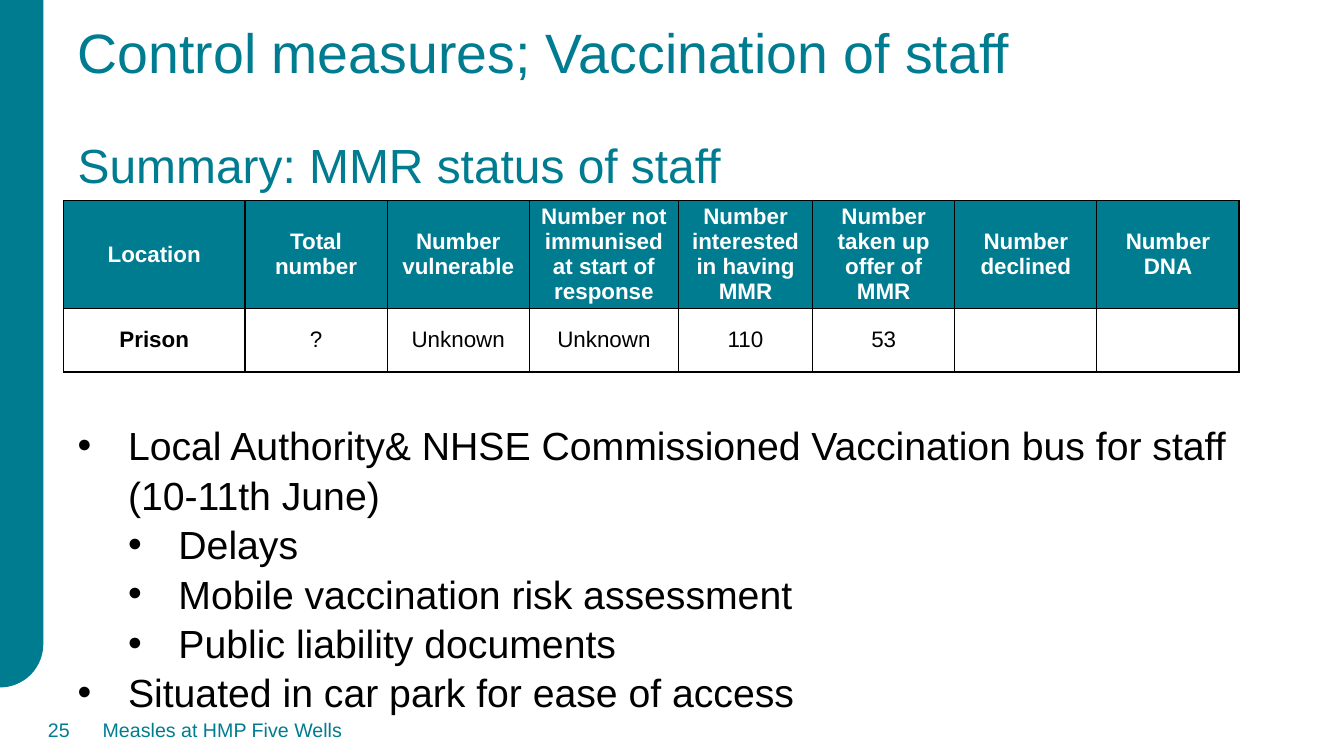
"""Build the slide on MMR vaccination of prison staff."""
from dataclasses import dataclass
from math import cos, pi, sin

from lxml import etree
from pptx import Presentation
from pptx.dml.color import RGBColor
from pptx.enum.text import MSO_ANCHOR, MSO_AUTO_SIZE, PP_ALIGN
from pptx.oxml.ns import qn
from pptx.util import Inches, Pt

TOP, MIDDLE = MSO_ANCHOR.TOP, MSO_ANCHOR.MIDDLE
LEFT, CENTER, RIGHT = PP_ALIGN.LEFT, PP_ALIGN.CENTER, PP_ALIGN.RIGHT
NO_AUTOFIT = MSO_AUTO_SIZE.NONE


@dataclass(frozen=True)
class Theme:
    font: str = "Arial"
    teal: str = "007C91"
    black: str = "000000"
    white: str = "FFFFFF"
    title: float = 39.6
    subtitle: float = 34.2
    body: float = 28
    table: float = 16
    footer: float = 14


THEME = Theme()


def style(paragraph, size, color, align=LEFT, bold=False):
    paragraph.alignment = align
    for run in paragraph.runs:
        run.font.name = THEME.font
        run.font.size = Pt(size)
        run.font.bold = bold
        run.font.color.rgb = RGBColor.from_string(color)


def place(shape, left, top, width, height):
    shape.left, shape.top = Inches(left), Inches(top)
    shape.width, shape.height = Inches(width), Inches(height)


prs = Presentation()
prs.slide_width, prs.slide_height = Inches(13.33), Inches(7.5)
slide = prs.slides.add_slide(prs.slide_layouts[1])
title, measures = slide.placeholders

BAR_WIDTH, BAR_HEIGHT, ARC_STEPS = 0.43, 6.82, 24
angles = [pi / 2 * step / ARC_STEPS for step in range(ARC_STEPS + 1)]
corner = [(Inches(BAR_WIDTH * cos(angle)),
           Inches(BAR_HEIGHT - BAR_WIDTH + BAR_WIDTH * sin(angle)))
          for angle in angles]
outline = slide.shapes.build_freeform(0, 0)
outline.add_line_segments([(Inches(BAR_WIDTH), 0)] + corner, close=True)
side_bar = outline.convert_to_shape()
side_bar.shadow.inherit = False
side_bar.fill.solid()
side_bar.fill.fore_color.rgb = RGBColor.from_string(THEME.teal)
side_bar.line.fill.background()

place(title, 0.67, 0.2, 12.17, 1.42)
title.text_frame.text = "Control measures; Vaccination of staff\nSummary: MMR status of staff"
title.text_frame.vertical_anchor = TOP
title.text_frame.auto_size = NO_AUTOFIT
heading, subheading = title.text_frame.paragraphs
style(heading, THEME.title, THEME.teal)
style(subheading, THEME.subtitle, THEME.teal)
heading.line_spacing = subheading.line_spacing = 0.9
subheading.space_before = Pt(41)

FOOTERS = [
    ("Measles at HMP Five Wells", 0.92, 10.94, LEFT),
    ("25", 0.14, 0.65, RIGHT),
]
for text, left, width, align in FOOTERS:
    footer = slide.shapes.add_textbox(Inches(left), Inches(7.04), Inches(width), Inches(0.4))
    footer.text_frame.word_wrap = True
    footer.text_frame.vertical_anchor = MIDDLE
    footer.text_frame.text = text
    style(footer.text_frame.paragraphs[0], THEME.footer, THEME.teal, align)

COLUMNS = [
    ("Location", "Prison", 1.8),
    ("Total number", "?", 1.41),
    ("Number vulnerable", "Unknown", 1.41),
    ("Number not immunised at start of response", "Unknown", 1.48),
    ("Number interested in having MMR", "110", 1.33),
    ("Number taken up offer of MMR", "53", 1.41),
    ("Number declined", "", 1.41),
    ("Number DNA", "", 1.41),
]
ROW_HEIGHTS = [1.07, 0.63]
status = slide.shapes.add_table(
    len(ROW_HEIGHTS), len(COLUMNS), Inches(0.63), Inches(1.99), Inches(11.66), Inches(1.7)
).table
status.horz_banding = False
for row, height in zip(status.rows, ROW_HEIGHTS):
    row.height = Inches(height)
for column, (header, value, width) in enumerate(COLUMNS):
    status.columns[column].width = Inches(width)
    for row, text in enumerate((header, value)):
        cell = status.cell(row, column)
        cell.text_frame.text = text
        cell.vertical_anchor = MIDDLE
        cell.margin_left = cell.margin_right = Inches(0.07)
        cell.margin_top = cell.margin_bottom = 0
        is_header = row == 0
        style(cell.text_frame.paragraphs[0], THEME.table,
              THEME.white if is_header else THEME.black, CENTER, is_header or column == 0)
        properties = cell._tc.get_or_add_tcPr()
        for side in ("a:lnL", "a:lnR", "a:lnT", "a:lnB"):
            border = etree.SubElement(properties, qn(side), w=str(Pt(1)))
            fill = etree.SubElement(border, qn("a:solidFill"))
            etree.SubElement(fill, qn("a:srgbClr"), val=THEME.black)
        if is_header:
            cell.fill.solid()
            cell.fill.fore_color.rgb = RGBColor.from_string(THEME.teal)
        else:
            cell.fill.background()

MEASURES = [
    ("Local Authority& NHSE Commissioned Vaccination bus for staff (10-11th June)", 0),
    ("Delays", 1),
    ("Mobile vaccination risk assessment", 1),
    ("Public liability documents", 1),
    ("Situated in car park for ease of access", 0),
]
place(measures, 0.67, 4.11, 12.17, 2.93)
measures.text_frame.text = "\n".join(text for text, _ in MEASURES)
measures.text_frame.vertical_anchor = TOP
measures.text_frame.auto_size = NO_AUTOFIT
for paragraph, (_, level) in zip(measures.text_frame.paragraphs, MEASURES):
    paragraph.level = level
    properties = paragraph._p.get_or_add_pPr()
    properties.set("marL", str(Inches(0.5 * (level + 1))))
    properties.set("indent", str(Inches(-0.5)))
    etree.SubElement(properties, qn("a:buFont"), typeface=THEME.font)
    etree.SubElement(properties, qn("a:buChar"), char="•")
    paragraph.space_before = Pt(0)
    paragraph.line_spacing = 1.05
    style(paragraph, THEME.body, THEME.black)

prs.save("out.pptx")
